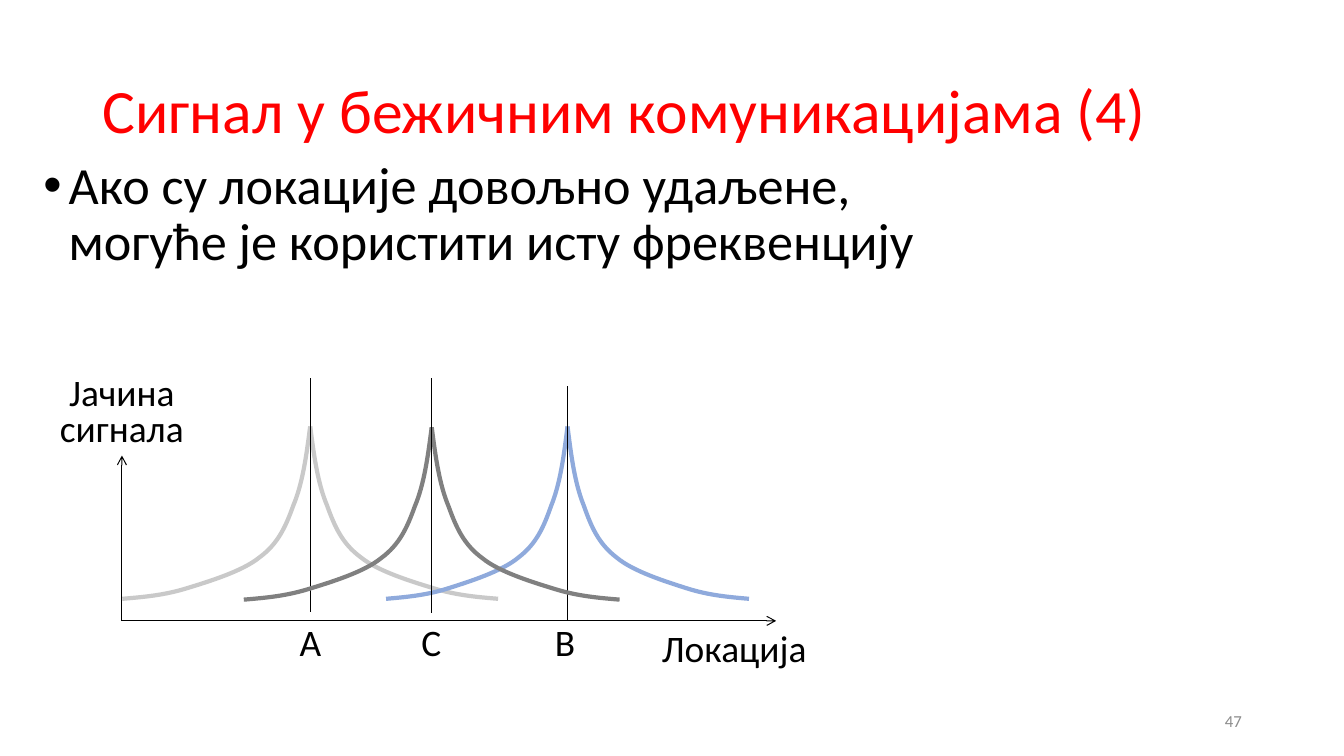
from dataclasses import dataclass

from lxml.etree import SubElement
from pptx import Presentation
from pptx.dml.color import RGBColor
from pptx.enum.shapes import MSO_CONNECTOR
from pptx.enum.text import MSO_ANCHOR, MSO_AUTO_SIZE, PP_ALIGN
from pptx.oxml.ns import qn
from pptx.shapes.base import BaseShape
from pptx.slide import Slide
from pptx.text.text import TextFrame, _Paragraph
from pptx.util import Pt

COLORS = {
    "title": "FF0000",
    "text": "000000",
    "number": "8C8C8C",
    "light": "C9C9C9",
    "dark": "808080",
    "blue": "8FAADC",
}
FONT = "Calibri"
LABEL_SIZE = 26.7

# Axes and signal curves
AXIS_LEFT, AXIS_TOP, AXIS_RIGHT, AXIS_BOTTOM = 87.1, 325.4, 554.4, 443.5
SIGNAL_HEIGHT = 123.1
# One side of a signal as Bezier points: share of the reach, share of the height
DECAY = [
    (0, 0),
    (0.02, 0.17), (0.04, 0.33), (0.09, 0.46),
    (0.13, 0.58), (0.17, 0.68), (0.27, 0.76),
    (0.36, 0.84), (0.54, 0.9), (0.66, 0.94),
    (0.78, 0.98), (0.89, 0.99), (1, 1),
]


@dataclass
class Station:
    name: str
    x: float
    peak: float
    reach: float
    color: str
    mast_top: float
    mast_bottom: float
    label_center: float


@dataclass
class Label:
    lines: list[str]
    left: float
    top: float
    width: float
    height: float
    size: float = LABEL_SIZE
    color: str = "text"
    alignment: PP_ALIGN = PP_ALIGN.CENTER
    spacing: float = 1.0
    anchor: MSO_ANCHOR = MSO_ANCHOR.TOP
    wrap: bool = False


STATIONS = [
    Station("A", 221.6, 304.6, 134.2, "light", 270, 437, 221.8),
    Station("B", 405.4, 304.6, 129.6, "blue", 275.8, AXIS_BOTTOM, 403.6),
    Station("C", 308.4, 305.2, 134.2, "dark", 270, 437.8, 308.2),
]
LABELS = [
    Label(["Јачина", "сигнала"], 35.3, 266.4, 103.7, 59, spacing=0.8),
    Label(["Локација"], 465.1, 442.8, 118.8, 39.6),
    Label(["47"], 678.2, 500.4, 216, 28.8, 12, "number",
          PP_ALIGN.RIGHT, anchor=MSO_ANCHOR.MIDDLE, wrap=True),
]


def rgb(name: str) -> RGBColor:
    return RGBColor.from_string(COLORS[name])


def add_run(paragraph: _Paragraph, text: str, size: float, color: str) -> None:
    run = paragraph.add_run()
    run.text = text
    run.font.name = FONT
    run.font.size = Pt(size)
    run.font.color.rgb = rgb(color)


def place(shape: BaseShape, left: float, top: float, width: float, height: float) -> None:
    shape.left, shape.top = Pt(left), Pt(top)
    shape.width, shape.height = Pt(width), Pt(height)


def fill_placeholder(frame: TextFrame, text: str, size: float, color: str,
                     anchor: MSO_ANCHOR) -> _Paragraph:
    frame.word_wrap = True
    frame.auto_size = MSO_AUTO_SIZE.NONE
    frame.vertical_anchor = anchor
    paragraph = frame.paragraphs[0]
    paragraph.alignment = PP_ALIGN.LEFT
    paragraph.line_spacing = 0.9
    add_run(paragraph, text, size, color)
    return paragraph


def add_label(slide: Slide, label: Label) -> None:
    shape = slide.shapes.add_textbox(Pt(label.left), Pt(label.top),
                                     Pt(label.width), Pt(label.height))
    frame = shape.text_frame
    frame.word_wrap = label.wrap
    frame.vertical_anchor = label.anchor
    paragraph = frame.paragraphs[0]
    paragraph.alignment = label.alignment
    paragraph.line_spacing = label.spacing
    for index, line in enumerate(label.lines):
        if index:
            paragraph.add_line_break()
        add_run(paragraph, line, label.size, label.color)


def add_line(slide: Slide, start: tuple[float, float], end: tuple[float, float],
             arrow: bool = False) -> None:
    connector = slide.shapes.add_connector(
        MSO_CONNECTOR.STRAIGHT, *(Pt(value) for value in (*start, *end)))
    connector.line.color.rgb = rgb("text")
    connector.line.width = Pt(0.75)
    if arrow:
        SubElement(connector.line._get_or_add_ln(), qn("a:tailEnd"), type="arrow")
    SubElement(connector._element.spPr, qn("a:effectLst"))


def add_decay(slide: Slide, station: Station, direction: int) -> None:
    points = [(Pt(station.x + direction * station.reach * across),
               Pt(station.peak + SIGNAL_HEIGHT * down)) for across, down in DECAY]
    builder = slide.shapes.build_freeform(*points[0])
    builder.add_line_segments(points[1:], close=False)
    shape = builder.convert_to_shape()
    shape.shadow.inherit = False
    shape.fill.background()
    shape.line.color.rgb = rgb(station.color)
    shape.line.width = Pt(3)

    # Each three segments become one Bezier curve
    segments = shape._element.xpath(".//a:lnTo")
    outline = segments[0].getparent()
    for first in range(0, len(segments), 3):
        curve = SubElement(outline, qn("a:cubicBezTo"))
        for segment in segments[first:first + 3]:
            curve.append(segment[0])
            outline.remove(segment)


def add_station(slide: Slide, station: Station) -> None:
    for direction in (1, -1):
        add_decay(slide, station, direction)
    add_line(slide, (station.x, station.mast_top), (station.x, station.mast_bottom))
    add_label(slide, Label([station.name], station.label_center - 15, 438.5, 30, 39.6))


def main() -> None:
    presentation = Presentation()
    presentation.slide_width, presentation.slide_height = Pt(960), Pt(540)
    slide = presentation.slides.add_slide(presentation.slide_layouts[1])

    # Title and list
    title, body = slide.shapes.title, slide.placeholders[1]
    place(title, 66, 28.8, 828, 104.4)
    fill_placeholder(title.text_frame, "Сигнал у бежичним комуникацијама (4)",
                     44, "title", MSO_ANCHOR.MIDDLE)
    place(body, 23.8, 110.2, 707, 375.8)
    paragraph = fill_placeholder(
        body.text_frame,
        "Ако су локације довољно удаљене, могуће је користити исту фреквенцију",
        37.3, "text", MSO_ANCHOR.TOP)
    paragraph.space_before = Pt(10)
    properties = paragraph._p.get_or_add_pPr()
    properties.set("marL", str(Pt(18)))
    properties.set("indent", str(-Pt(18)))

    # Diagram
    origin = (AXIS_LEFT, AXIS_BOTTOM)
    add_line(slide, origin, (AXIS_LEFT, AXIS_TOP), arrow=True)
    add_line(slide, origin, (AXIS_RIGHT, AXIS_BOTTOM), arrow=True)
    for station in STATIONS:
        add_station(slide, station)

    # Axis names and slide number
    for label in LABELS:
        add_label(slide, label)

    presentation.save("out.pptx")


if __name__ == "__main__":
    main()
